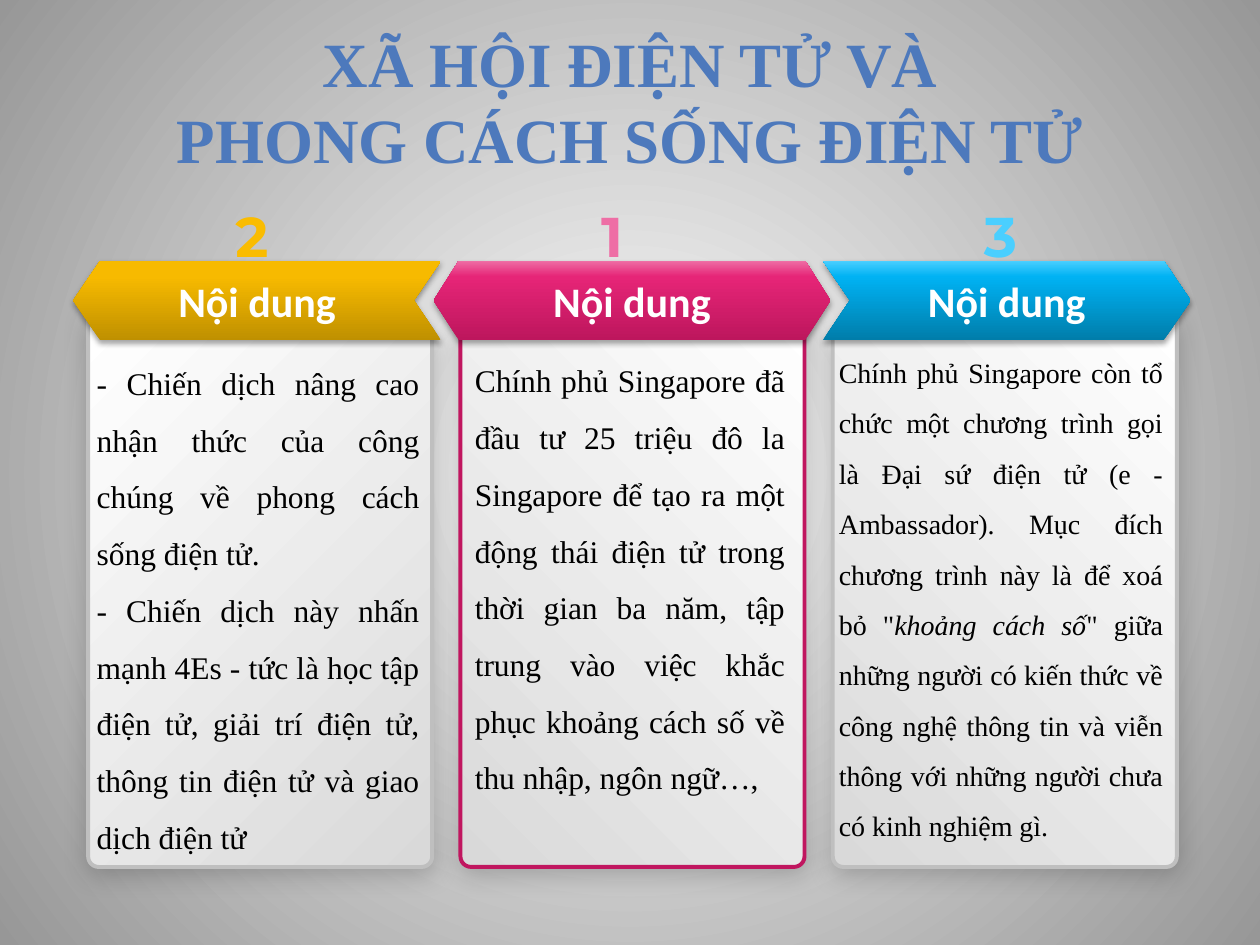
import math
from pptx import Presentation
from pptx.dml.color import RGBColor
from pptx.enum import shapes, text
from pptx.oxml import parse_xml
from pptx.oxml.ns import nsdecls, qn
from pptx.util import Pt

SERIF = "Times New Roman"
ALIGN = text.PP_ALIGN
SHAPE = shapes.MSO_SHAPE


def color(code):
    return RGBColor.from_string(code)


def blend(fill, root, stops, angle=None):
    """Fill with a gradient: clockwise at an angle, or from the centre."""
    fill.solid()
    marks = "".join(f'<a:gs pos="{pos * 1000}"><a:srgbClr val="{code}"/></a:gs>'
                    for pos, code in stops)
    if angle is None:
        way = ('<a:path path="circle"><a:fillToRect l="50000" t="50000" '
               'r="50000" b="50000"/></a:path>')
    else:
        way = f'<a:lin ang="{angle * 60000}" scaled="0"/>'
    grad = parse_xml(f'<a:gradFill {nsdecls("a")} rotWithShape="1">'
                     f'<a:gsLst>{marks}</a:gsLst>{way}</a:gradFill>')
    old = next(root.iter(qn("a:solidFill")))
    old.getparent().replace(old, grad)


def shade(shape, alpha, blur, dist):
    """Cast a black shadow straight down."""
    shape.shadow.inherit = False
    shape._element.spPr.find(qn("a:effectLst")).append(parse_xml(
        f'<a:outerShdw {nsdecls("a")} blurRad="{Pt(blur)}" dist="{Pt(dist)}" '
        f'dir="5400000" rotWithShape="0"><a:srgbClr val="000000">'
        f'<a:alpha val="{alpha * 1000}"/></a:srgbClr></a:outerShdw>'))


def style(run, size, face, code, bold=False):
    font = run.font
    font.size, font.name, font.bold = Pt(size), face, bold
    font.color.rgb = color(code)


def add_title(slide, box, words):
    title = slide.shapes.title
    title.left, title.top, title.width, title.height = map(Pt, box)
    frame = title.text_frame
    frame.text = words
    frame.vertical_anchor = text.MSO_ANCHOR.MIDDLE
    para = frame.paragraphs[0]
    para.alignment = ALIGN.CENTER
    stops = [(0, "7494C9"), (49, "4D79BC"), (50, "346AAA"),
             (92, "325F94"), (100, "315D91")]
    for run in para.runs:
        style(run, 36, SERIF, "4D79BC", True)
        blend(run.font.fill, run._r, stops, 90)


def add_panel(slide, box, line, angle, high_left):
    """Card with round lower corners and a slanted top."""
    left, top, width, height = box
    rad, slant = 6, 10.5
    pts = [(width, 0)]
    for mid, start in ((width - rad, 0), (rad, 90)):
        for step in range(0, 91, 15):
            turn = math.radians(start + step)
            pts.append((mid + rad * math.cos(turn),
                        height - rad + rad * math.sin(turn)))
    pts.append((0, slant))
    if high_left:
        pts = [(width - x, y) for x, y in pts]
    pts = [(Pt(left + x), Pt(top + y)) for x, y in pts]
    build = slide.shapes.build_freeform(*pts[0])
    build.add_line_segments(pts[1:], close=True)
    card = build.convert_to_shape()
    blend(card.fill, card._element.spPr, [(0, "D9D9D9"), (100, "FFFFFF")], angle)
    card.line.color.rgb = color(line)
    card.line.width = Pt(2.25)
    shade(card, 20, 14, 3)


def add_banner(slide, box, kind, adjust, flip, tones):
    sign = slide.shapes.add_shape(kind, *map(Pt, box))
    sign.adjustments[0] = adjust
    if flip:
        sign._element.spPr.xfrm.set("flipH", "1")
    sign.line.fill.background()
    blend(sign.fill, sign._element.spPr, list(zip((0, 80, 100), tones)), 270)
    shade(sign, 35, 3.1, 1.8)
    frame = sign.text_frame
    frame.text = "Nội dung"
    frame.vertical_anchor = text.MSO_ANCHOR.MIDDLE
    para = frame.paragraphs[0]
    para.alignment = ALIGN.CENTER
    style(para.runs[0], 24, "Calibri", "FFFFFF", True)


def add_number(slide, box, digit, code):
    frame = slide.shapes.add_textbox(*map(Pt, box)).text_frame
    frame.word_wrap = False
    frame.text = digit
    style(frame.paragraphs[0].runs[0], 32, "Montserrat", code, True)


def add_body(slide, box, size, paras):
    """Justified text; words between asterisks are italic."""
    frame = slide.shapes.add_textbox(*map(Pt, box)).text_frame
    frame.word_wrap = True
    frame.auto_size = text.MSO_AUTO_SIZE.SHAPE_TO_FIT_TEXT
    for i, words in enumerate(paras):
        para = frame.add_paragraph() if i else frame.paragraphs[0]
        para.alignment, para.line_spacing = ALIGN.JUSTIFY, 1.5
        for j, part in enumerate(words.split("*")):
            run = para.add_run()
            run.text = part
            style(run, size, SERIF, "000000")
            run.font.italic = j % 2 == 1


def add_column(slide, box, col):
    left, top, width, height = box
    rise = col["rise"]
    add_number(slide, (left + col["num_x"], top - 37.6, 37.4, 37.4),
               col["digit"], col["tones"][2])
    add_panel(slide, (left, top + rise, width, height - rise),
              col["line"], col["angle"], col["flip"])
    dx, wide = col["sign"]
    add_banner(slide, (left + dx, top, wide, 45.4), col["kind"],
               col["adjust"], col["flip"], col["tones"])
    dx, dy, wide, high = col["body"]
    add_body(slide, (left + dx, top + dy, wide, high), col["size"], col["paras"])


COLS = [
    dict(digit="2", num_x=77, rise=33.2, line="BFBFBF", angle=225, flip=True,
         sign=(-8.6, 210.2), kind=SHAPE.CHEVRON, adjust=0.34,
         tones=("BF9000", "F7BA00", "FABC00"),
         body=(-2.2, 44.7, 198.7, 301.7), size=18, paras=[
             "- Chiến dịch nâng cao nhận thức của công chúng về phong cách "
             "sống điện tử.",
             "- Chiến dịch này nhấn mạnh 4Es - tức là học tập điện tử, giải "
             "trí điện tử, thông tin điện tử và giao dịch điện tử"]),
    dict(digit="1", num_x=73.2, rise=30.3, line="C0165F", angle=315, flip=False,
         sign=(-15.4, 226.8), kind=SHAPE.HEXAGON, adjust=0.318,
         tones=("BD165D", "E62577", "EE6EA5"),
         body=(1.1, 43.2, 191.5, 265), size=18, paras=[
             "Chính phủ Singapore đã đầu tư 25 triệu đô la Singapore để tạo "
             "ra một động thái điện tử trong thời gian ba năm, tập trung vào "
             "việc khắc phục khoảng cách số về thu nhập, ngôn ngữ…,"]),
    dict(digit="3", num_x=79.2, rise=33.2, line="BFBFBF", angle=315, flip=False,
         sign=(-5.7, 210.2), kind=SHAPE.CHEVRON, adjust=0.34,
         tones=("007DAA", "00B2F3", "4ACFFF"),
         body=(-3.6, 41.1, 199.4, 301.7), size=16, paras=[
             "Chính phủ Singapore còn tổ chức một chương trình gọi là Đại sứ "
             "điện tử (e - Ambassador). Mục đích chương trình này là để xoá "
             "bỏ \"*khoảng cách số*\" giữa những người có kiến thức về công "
             "nghệ thông tin và viễn thông với những người chưa có kinh "
             "nghiệm gì."]),
]


def main():
    deck = Presentation()
    deck.slide_width, deck.slide_height = Pt(720), Pt(540)
    slide = deck.slides.add_slide(deck.slide_layouts[5])
    blend(slide.background.fill, slide.element,
          [(0, "FFFFFF"), (100, "979797")])
    for i, col in enumerate(COLS):
        add_column(slide, (50.4 + 212.75 * i, 149, 196.6, 346.4), col)
    add_title(slide, (36, 10, 648, 94.3),
              "XÃ HỘI ĐIỆN TỬ VÀ\vPHONG CÁCH SỐNG ĐIỆN TỬ")
    deck.save("out.pptx")


if __name__ == "__main__":
    main()
